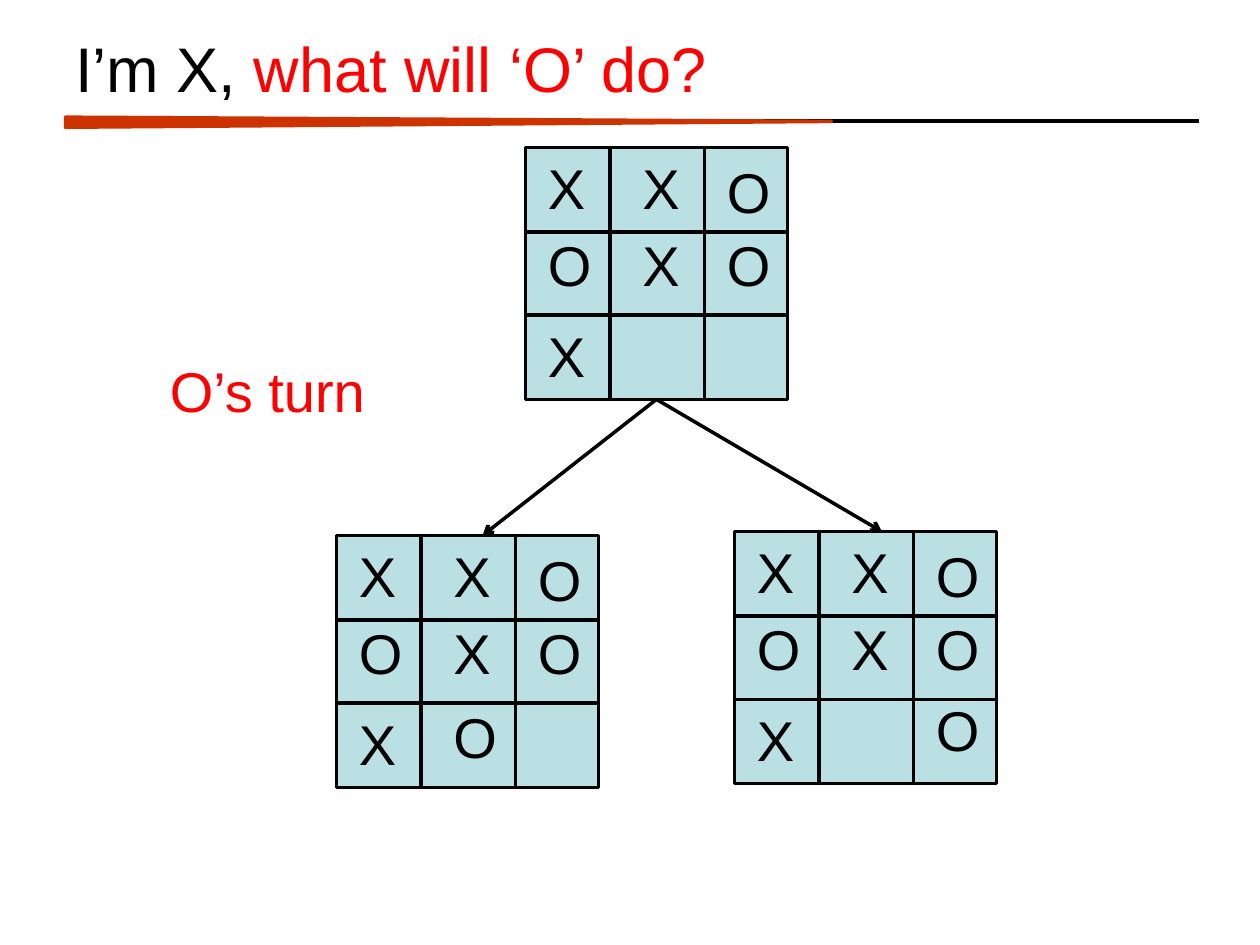
import pptx
import pptx.util
import pptx.dml.color
import pptx.enum.shapes
import pptx.enum.text
import pptx.oxml.ns
import lxml.etree
from pptx.util import Inches

deck = pptx.Presentation()
deck.slide_width, deck.slide_height = Inches(10), Inches(7.5)
slide = deck.slides.add_slide(deck.slide_layouts[6])
shapes = slide.shapes


def paint(color_format, color):
    color_format.rgb = pptx.dml.color.RGBColor.from_string(color)


def stroke(x1, y1, x2, y2):
    line = shapes.add_connector(pptx.enum.shapes.MSO_CONNECTOR.STRAIGHT,
                                Inches(x1), Inches(y1), Inches(x2), Inches(y2))
    line.line.width = pptx.util.Pt(2)
    paint(line.line.color, "000000")
    lxml.etree.SubElement(line._element.spPr, pptx.oxml.ns.qn("a:effectLst"))
    return line


stroke(0.52, 0.96, 9.52, 0.96)

wedge = shapes.add_shape(pptx.enum.shapes.MSO_SHAPE.ISOSCELES_TRIANGLE,
                         Inches(3.52), Inches(-2.07), Inches(0.08), Inches(6.08))
wedge.rotation = 90
wedge.adjustments[0] = 0.42
wedge.shadow.inherit = False
wedge.fill.solid()
paint(wedge.fill.fore_color, "CC3300")
paint(wedge.line.color, "CC3300")
wedge.line.width = pptx.util.Pt(2)

board_width, board_height = 2.08, 2
column_lines = (0.67, 1.42)
row_lines = (0.67, 1.33)
mark_lefts = (0.08, 0.83, 1.5)
mark_tops = ((0, 0, 0.03), (0.61, 0.61, 0.61), (1.33, 1.28, 1.25))
positions = (
    (5.83, 4.22, ("XXO", "OXO", "X O")),
    (2.67, 4.25, ("XXO", "OXO", "XO ")),
    (4.17, 1.17, ("XXO", "OXO", "X  ")),
)
captions = []
for left, top, rows in positions:
    board = shapes.add_shape(pptx.enum.shapes.MSO_SHAPE.RECTANGLE, Inches(left), Inches(top),
                             Inches(board_width), Inches(board_height))
    board.shadow.inherit = False
    board.fill.solid()
    paint(board.fill.fore_color, "BBE0E3")
    paint(board.line.color, "000000")
    board.line.width = pptx.util.Pt(2)
    for offset in column_lines:
        stroke(left + offset, top, left + offset, top + board_height)
    for offset in row_lines:
        stroke(left + board_width, top + offset, left, top + offset)
    for row, tops in zip(rows, mark_tops):
        for mark, mark_left, mark_top in zip(row, mark_lefts, tops):
            if mark != " ":
                captions.append((left + mark_left, top + mark_top, 0.67, 0.64, 32,
                                 [(mark, "000000")]))

current_board = board
for x, y in ((3.83, 4.25), (7, 4.22)):
    move = stroke(5.21, 3.17, x, y)
    move.begin_connect(current_board, 2)
    outline = move._element.spPr.find(pptx.oxml.ns.qn("a:ln"))
    lxml.etree.SubElement(outline, pptx.oxml.ns.qn("a:tailEnd"), type="arrow")

captions.append((1.25, 2.78, 1.83, 0.64, 32, [("O’s turn", "FF0000")]))
captions.append((0.5, 0.17, 9, 0.72, 36,
                 [("I’m X, ", "000000"), ("what will ‘O’ do?", "FF0000")]))
for left, top, width, height, size, pieces in captions:
    caption = shapes.add_textbox(Inches(left), Inches(top), Inches(width), Inches(height))
    frame = caption.text_frame
    frame.word_wrap = True
    frame.vertical_anchor = (pptx.enum.text.MSO_ANCHOR.MIDDLE if size == 36
                             else pptx.enum.text.MSO_ANCHOR.TOP)
    paragraph = frame.paragraphs[0]
    paragraph.font.name = "Arial"
    paragraph.font.size = pptx.util.Pt(size)
    for words, color in pieces:
        run = paragraph.add_run()
        run.text = words
        paint(run.font.color, color)

deck.save("out.pptx")
